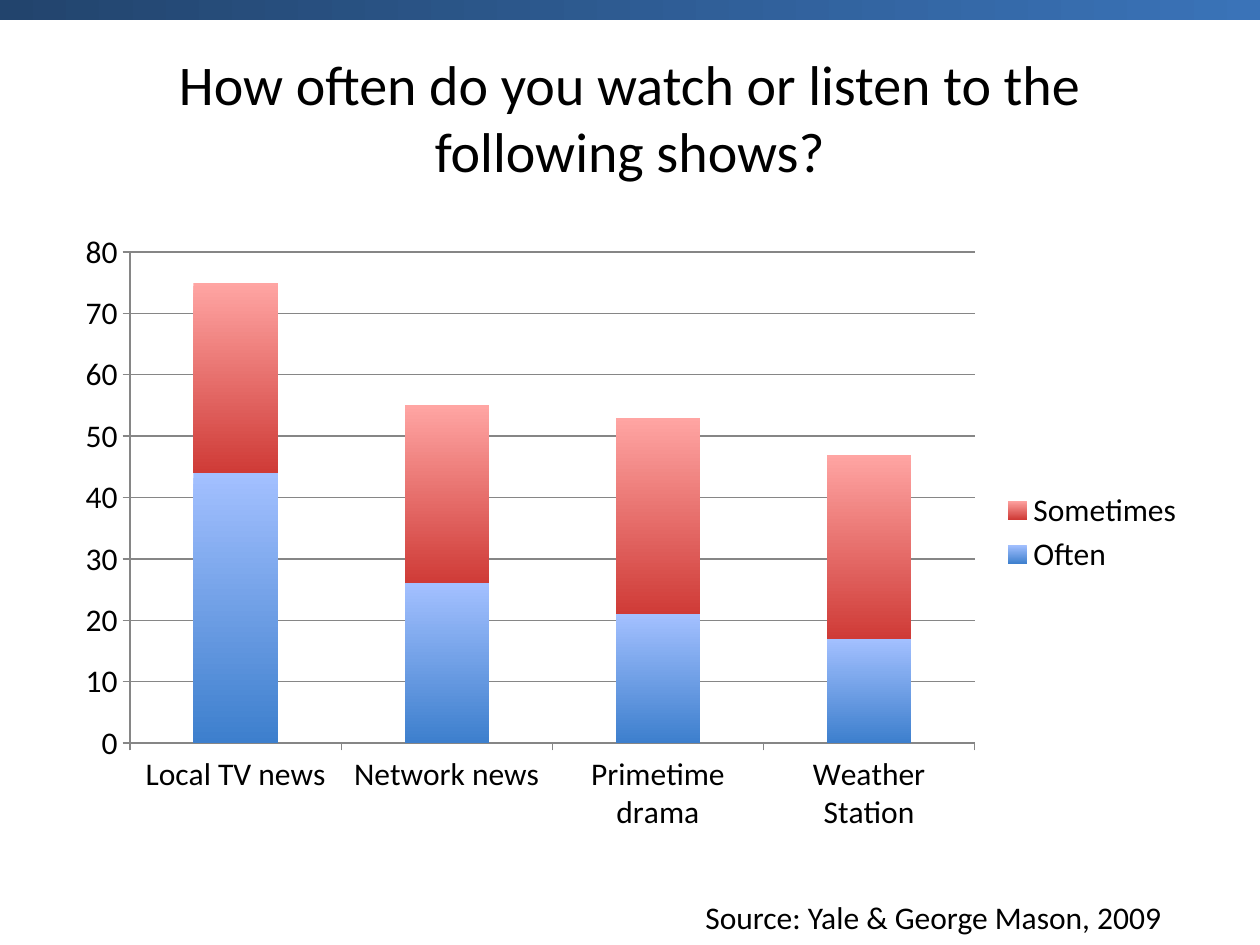
"""Build a slide with a stacked column chart of how often shows are watched."""
from pptx import Presentation
from pptx.chart.data import CategoryChartData
from pptx.dml.color import RGBColor
from pptx.enum.chart import XL_CHART_TYPE, XL_LEGEND_POSITION, XL_TICK_MARK
from pptx.enum.shapes import MSO_SHAPE
from pptx.enum.text import MSO_ANCHOR, PP_ALIGN
from pptx.util import Inches, Pt

STACKED = XL_CHART_TYPE.COLUMN_STACKED
RIGHT = XL_LEGEND_POSITION.RIGHT
OUTSIDE = XL_TICK_MARK.OUTSIDE
RECTANGLE = MSO_SHAPE.RECTANGLE
MIDDLE, TOP = MSO_ANCHOR.MIDDLE, MSO_ANCHOR.TOP
CENTER, LEFT = PP_ALIGN.CENTER, PP_ALIGN.LEFT

FONT = "Calibri"
BLACK = RGBColor(0x00, 0x00, 0x00)
GRAY = RGBColor(0x86, 0x86, 0x86)
NAVY = RGBColor(0x22, 0x44, 0x6D)
BLUE = RGBColor(0x3A, 0x73, 0xB8)
OFTEN_COLORS = (RGBColor(0xA3, 0xC0, 0xFF), RGBColor(0x3D, 0x7F, 0xCD))
SOMETIMES_COLORS = (RGBColor(0xFF, 0xA5, 0xA3), RGBColor(0xCF, 0x3B, 0x37))


def set_gradient(fill, colors, angle):
    fill.gradient()
    fill.gradient_angle = angle
    for stop, color in zip(fill.gradient_stops, colors):
        stop.color.rgb = color


def add_text(s, text, box, size, align, anchor, wrap):
    tf = s.shapes.add_textbox(*[Inches(v) for v in box]).text_frame
    tf.word_wrap = wrap
    tf.vertical_anchor = anchor
    tf.text = text
    p = tf.paragraphs[0]
    p.alignment = align
    font = p.runs[0].font
    font.name, font.size = FONT, Pt(size)
    font.color.rgb = BLACK


prs = Presentation()
prs.slide_width, prs.slide_height = Inches(10), Inches(7.5)
s = prs.slides.add_slide(prs.slide_layouts[6])

add_text(s, "How often do you watch or listen to the following shows?",
         (0.5, 0.3, 9, 1.25), 32, CENTER, MIDDLE, True)

data = CategoryChartData()
data.categories = ["Local TV news", "Network news", "Primetime drama", "Weather Station"]
data.add_series("Often", (44, 26, 21, 17))
data.add_series("Sometimes", (31, 29, 32, 30))
chart = s.shapes.add_chart(STACKED, Inches(0.5), Inches(1.75),
                           Inches(9), Inches(4.95), data).chart
chart.has_title = False
chart.font.name, chart.font.size = FONT, Pt(18)
chart.font.color.rgb = BLACK
chart.has_legend = True
chart.legend.position = RIGHT
chart.legend.include_in_layout = False

plot = chart.plots[0]
plot.vary_by_categories = False
plot.gap_width, plot.overlap = 150, 100
for series, colors in zip(plot.series, (OFTEN_COLORS, SOMETIMES_COLORS)):
    set_gradient(series.format.fill, colors, 270)

value_axis = chart.value_axis
value_axis.minimum_scale, value_axis.maximum_scale = 0, 80
value_axis.major_unit = 10
value_axis.has_major_gridlines = True
for axis in (chart.category_axis, value_axis):
    axis.major_tick_mark = OUTSIDE
for part in (chart.category_axis, value_axis, value_axis.major_gridlines):
    part.format.line.color.rgb = GRAY
    part.format.line.width = Pt(0.75)

add_text(s, "Source: Yale & George Mason, 2009",
         (5.5, 7.08, 3.86, 0.4), 18, LEFT, TOP, False)

sp = s.shapes.add_shape(RECTANGLE, 0, Inches(-0.17), Inches(10), Inches(0.33))
sp.shadow.inherit = False
sp.line.fill.background()
set_gradient(sp.fill, (NAVY, BLUE), 0)

prs.save("out.pptx")
